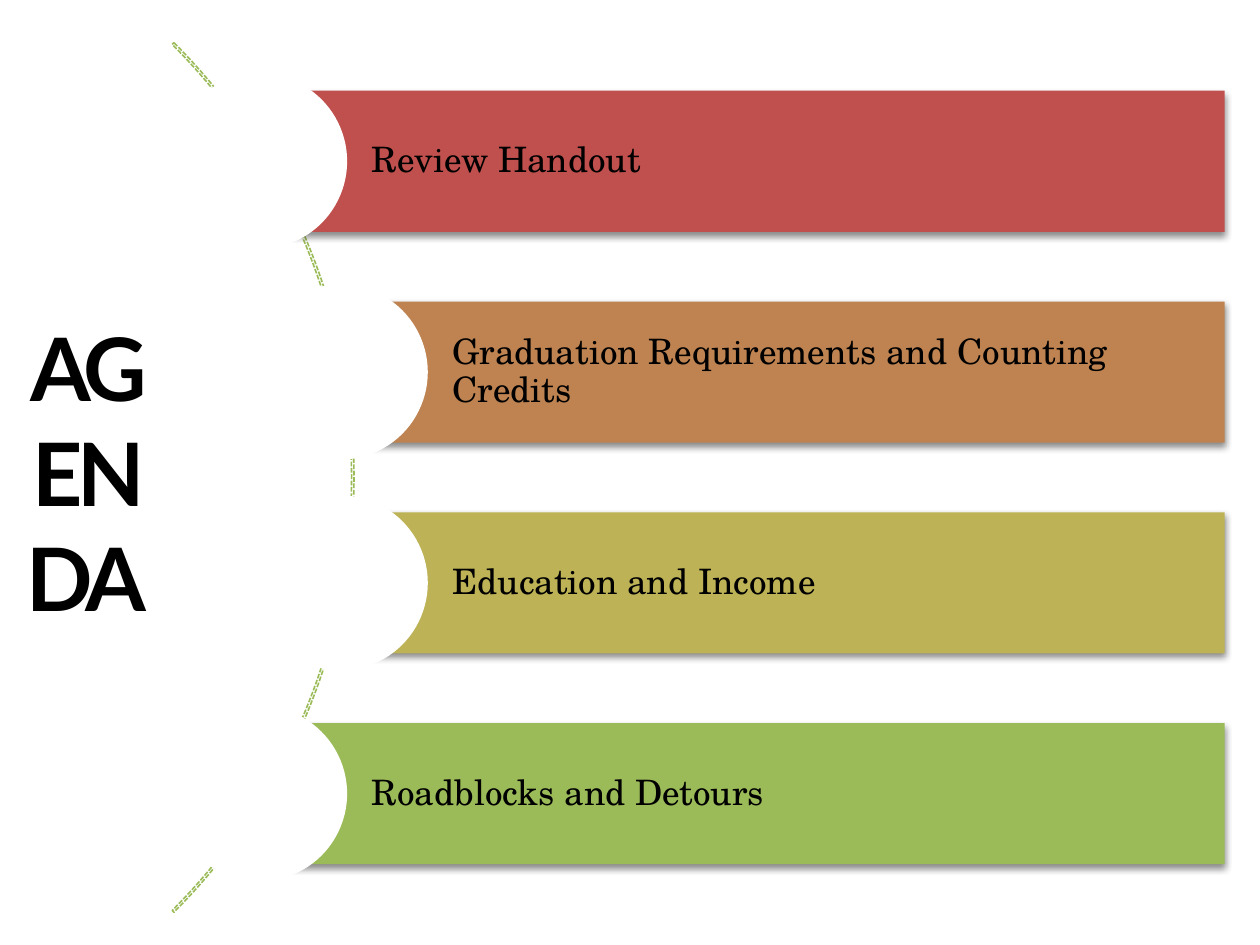
"""Build an agenda slide with four bars set along an arc."""
from lxml.etree import SubElement
from pptx import Presentation
from pptx.dml.color import RGBColor
from pptx.enum.dml import MSO_LINE
from pptx.enum.shapes import MSO_SHAPE
from pptx.enum.text import MSO_ANCHOR, MSO_AUTO_SIZE, PP_ALIGN
from pptx.oxml.ns import qn
from pptx.util import Inches, Pt

BLACK = RGBColor(0, 0, 0)
WHITE = RGBColor(255, 255, 255)
RED = RGBColor(0xC0, 0x50, 0x4D)
ORANGE = RGBColor(0xBE, 0x83, 0x51)
OLIVE = RGBColor(0xBD, 0xB2, 0x55)
GREEN = RGBColor(0x9B, 0xBB, 0x59)

TITLE = "AGENDA"
ITEMS = [
    ("Review Handout", RED, 2.06),
    ("Graduation Requirements and Counting Credits", ORANGE, 2.7),
    ("Education and Income", OLIVE, 2.7),
    ("Roadblocks and Detours", GREEN, 2.06),
]
TITLE_FONT = dict(name="Lato", size=Pt(50), bold=True)
ITEM_FONT = dict(name="TeX Gyre Schola", size=Pt(20), bold=False)
TITLE_FRAME = dict(vertical_anchor=MSO_ANCHOR.MIDDLE, word_wrap=True,
                   auto_size=MSO_AUTO_SIZE.NONE)
PAD = Inches(0.06)
ITEM_FRAME = dict(TITLE_FRAME, margin_left=Inches(0.89), margin_top=PAD,
                  margin_right=PAD, margin_bottom=PAD)
W, H = 10, 7.5
TOP, PITCH, BAR_H, RIGHT = 0.72, 1.673, 1.12, 9.72
DOT = 1.39
ARC_BOX = (-6.95, -1.09, 9.76, 9.76)
ARC_ADJ = (189, 27, 0.002)


def set_all(obj, values):
    for key, value in values.items():
        setattr(obj, key, value)


def write(tf, text, frame, font, align):
    set_all(tf, frame)
    p = tf.paragraphs[0]
    p.alignment = align
    r = p.add_run()
    r.text = text
    set_all(r.font, font)
    r.font.color.rgb = BLACK
    return p, r


def add_shape(s, kind, box, fill=None):
    sp = s.shapes.add_shape(kind, *map(Inches, box))
    sp.shadow.inherit = False
    sp.line.fill.background()
    if fill is None:
        sp.fill.background()
    else:
        sp.fill.solid()
        sp.fill.fore_color.rgb = fill
    return sp


def add_shadow(sp):
    effects = sp._element.spPr.find(qn("a:effectLst"))
    shadow = SubElement(effects, qn("a:outerShdw"), blurRad=str(Pt(4)),
                        dist=str(Pt(2)), dir="5400000", rotWithShape="0")
    color = SubElement(shadow, qn("a:srgbClr"), val=str(BLACK))
    SubElement(color, qn("a:alpha"), val="45000")


def add_title(s):
    sp = s.shapes.title
    set_all(sp, dict(left=Inches(0.02), top=Inches(0.33),
                     width=Inches(1.33), height=Inches(6.83)))
    p, r = write(sp.text_frame, TITLE, TITLE_FRAME, TITLE_FONT, PP_ALIGN.CENTER)
    p.space_after = Pt(36)
    sp.text_frame._txBody.bodyPr.set("vert", "wordArtVert")
    r.font._element.set("spc", "-300")


def add_arc(s):
    arc = add_shape(s, MSO_SHAPE.BLOCK_ARC, ARC_BOX)
    for i, value in enumerate(ARC_ADJ):
        arc.adjustments[i] = value
    arc.line.color.rgb = GREEN
    arc.line.width = Pt(0.9)
    arc.line.dash_style = MSO_LINE.SQUARE_DOT


def add_item(s, row, text, color, left):
    top = TOP + row * PITCH
    bar = add_shape(s, MSO_SHAPE.RECTANGLE, (left, top, RIGHT - left, BAR_H), color)
    add_shadow(bar)
    p, _ = write(bar.text_frame, text, ITEM_FRAME, ITEM_FONT, PP_ALIGN.LEFT)
    p.line_spacing = 0.9
    dot_top = top + (BAR_H - DOT) / 2
    add_shape(s, MSO_SHAPE.OVAL, (left - DOT / 2, dot_top, DOT, DOT), WHITE)


def main():
    prs = Presentation()
    prs.slide_width, prs.slide_height = Inches(W), Inches(H)
    s = prs.slides.add_slide(prs.slide_layouts[5])
    add_title(s)
    add_arc(s)
    for row, item in enumerate(ITEMS):
        add_item(s, row, *item)
    prs.save("out.pptx")


if __name__ == "__main__":
    main()
